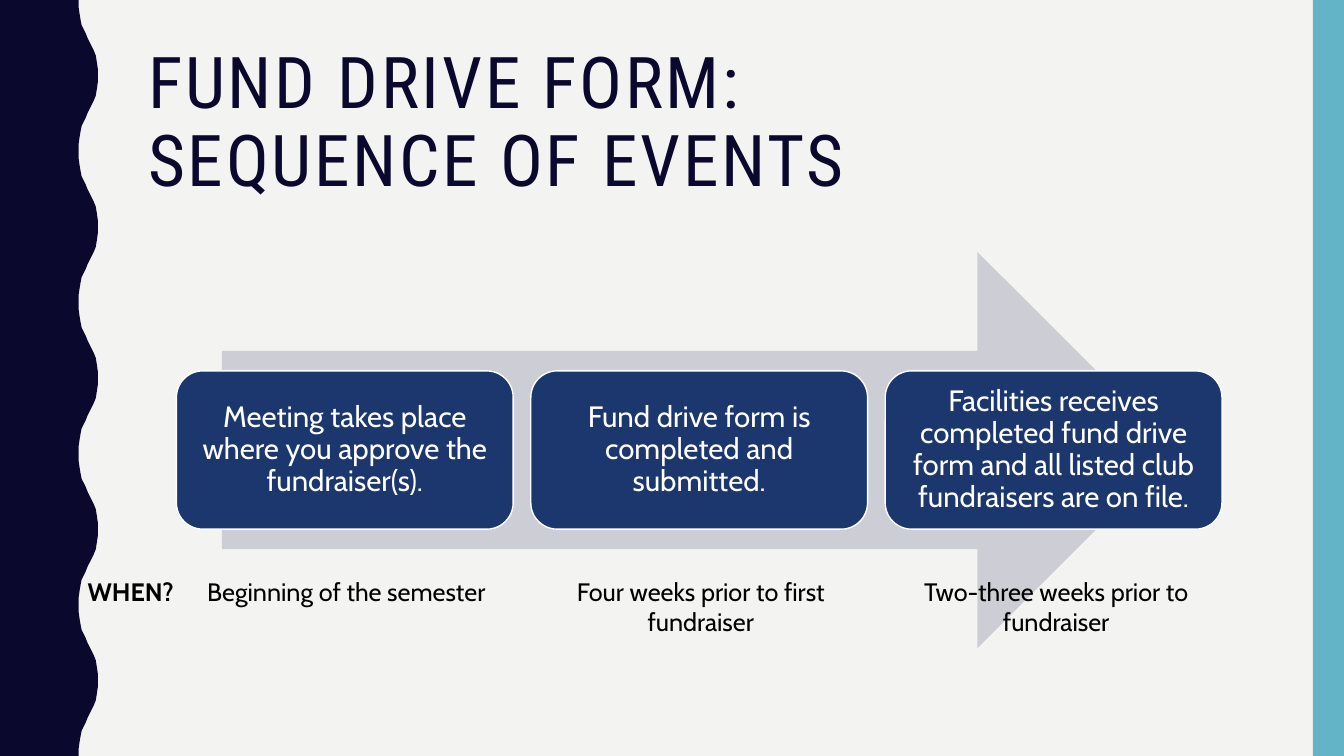
"""Builds the fund drive sequence-of-events slide."""
from pptx import Presentation
from pptx import util as u
from pptx.dml.color import RGBColor
from pptx.enum import shapes, text

NAVY = RGBColor(0x0B, 0x08, 0x2E)
BLUE = RGBColor(0x1B, 0x37, 0x6E)
TEAL = RGBColor(0x62, 0xB4, 0xC6)
GREY = RGBColor(0xCD, 0xCE, 0xD5)
PAPER = RGBColor(0xF3, 0xF3, 0xF2)
WHITE = RGBColor(0xFF, 0xFF, 0xFF)
BLACK = RGBColor(0, 0, 0)

TITLE = ["FUND DRIVE FORM:", "SEQUENCE OF EVENTS"]
STEPS = [
    "Meeting takes place where you approve the fundraiser(s).",
    "Fund drive form is completed and submitted.",
    "Facilities receives completed fund drive form and all listed club fundraisers are on file.",
]
TIMES = [
    ("Beginning of the semester", 1.92, 3.03, 0.4),
    ("Four weeks prior to first fundraiser", 5.14, 3.62, 0.71),
    ("Two-three weeks prior to fundraiser", 8.84, 3.27, 0.71),
]
UNIT = u.Inches(0.01)
WAVE = [(78, 0), (78, 7), (79, 14), (80, 20), (81, 25), (83, 29), (85, 33), (87, 38),
        (89, 42), (91, 46), (93, 50), (95, 55), (96, 61), (97, 68), (97, 75)]
PERIOD, COUNT = 150, 5
LEFT, PITCH = 1.75, 3.515
KINDS = shapes.MSO_SHAPE

deck = Presentation()
deck.slide_width, deck.slide_height = u.Inches(13.33), u.Inches(7.5)
slide = deck.slides.add_slide(deck.slide_layouts[6])
slide.background.fill.solid()
slide.background.fill.fore_color.rgb = PAPER


def paint(shape, fill, line=None):
    shape.shadow.inherit = False
    shape.fill.solid()
    shape.fill.fore_color.rgb = fill
    if line is None:
        shape.line.fill.background()
    else:
        shape.line.color.rgb = line
        shape.line.width = u.Pt(1)


def block(kind, box, fill, line=None):
    shape = slide.shapes.add_shape(kind, *map(u.Inches, box))
    paint(shape, fill, line)
    return shape


def style(para, size, color, face="Cabin", align=text.PP_ALIGN.CENTER):
    para.font.size, para.font.name = u.Pt(size), face
    para.font.color.rgb = color
    para.alignment = align


def label(words, box, **look):
    frame = slide.shapes.add_textbox(*map(u.Inches, box)).text_frame
    frame.word_wrap = True
    para = frame.paragraphs[0]
    para.text = words
    style(para, 18, BLACK, **look)
    return frame


crest = WAVE + [(x, PERIOD - y) for x, y in WAVE[-2::-1]]
edge = [(x, y + PERIOD * n) for n in range(COUNT) for x, y in crest]
pen = slide.shapes.build_freeform(0, 0, scale=UNIT)
pen.add_line_segments(edge + [(0, PERIOD * COUNT)], close=True)
paint(pen.convert_to_shape(), NAVY)
block(KINDS.RECTANGLE, (13.02, 0, 0.31, 7.5), TEAL)

head = slide.shapes.add_textbox(*map(u.Inches, (1.37, 0.42, 11.13, 1.63))).text_frame
head.word_wrap = True
para = head.paragraphs[0]
para.line_spacing = 0.9
for n, line in enumerate(TITLE):
    if n:
        para.add_line_break()
    run = para.add_run()
    run.text = line
    run.font._element.set("spc", "200")
style(para, 51, NAVY, "Roboto Condensed", text.PP_ALIGN.LEFT)

block(KINDS.RIGHT_ARROW, (2.2, 2.5, 9.46, 3.93), GREY)
for n, step in enumerate(STEPS):
    card = block(KINDS.ROUNDED_RECTANGLE, (LEFT + n * PITCH, 3.68, 3.34, 1.57), BLUE, WHITE)
    frame = card.text_frame
    frame.word_wrap = True
    frame.vertical_anchor = text.MSO_ANCHOR.MIDDLE
    frame.margin_left = frame.margin_right = u.Inches(0.09)
    frame.margin_top = frame.margin_bottom = u.Inches(0.09)
    para = frame.paragraphs[0]
    para.text = step
    para.line_spacing = 0.9
    style(para, 21, WHITE)

when = label("WHEN?", (0.71, 5.67, 1.2, 0.4), align=text.PP_ALIGN.LEFT)
when.margin_left = u.Inches(0.16)
when.paragraphs[0].font.bold = True
for words, left, width, height in TIMES:
    label(words, (left, 5.67, width, height))

deck.save("out.pptx")
